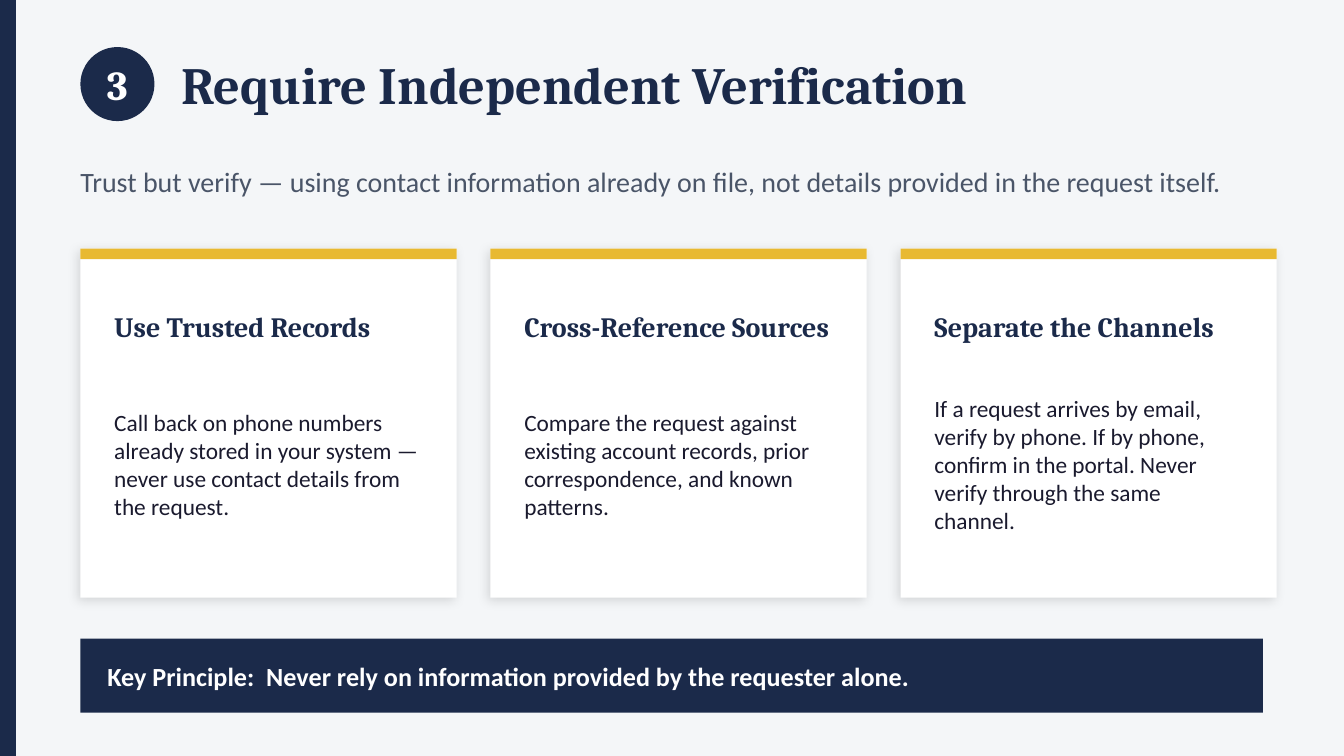
from dataclasses import dataclass

from lxml.etree import SubElement
from pptx import Presentation
from pptx.dml.color import RGBColor
from pptx.enum.shapes import MSO_SHAPE
from pptx.enum.text import MSO_ANCHOR, PP_ALIGN
from pptx.oxml.ns import qn
from pptx.shapes.autoshape import Shape
from pptx.slide import Slide
from pptx.util import Cm, Pt

COLORS = {
    "background": "F4F6F8",
    "navy": "1B2A4A",
    "gold": "E8B931",
    "white": "FFFFFF",
    "slate": "4A5568",
    "ink": "1A1A2E",
    "shadow": "000000",
}
SLIDE_WIDTH, SLIDE_HEIGHT = 25.4, 14.29
MARGIN = 1.52
CONTENT_WIDTH = 22.35
CARD_TOP, CARD_WIDTH, CARD_HEIGHT = 4.7, 7.11, 6.6
CARD_PITCH = 7.75
CARD_PADDING = 0.64


@dataclass(frozen=True)
class Area:
    left: float
    top: float
    width: float
    height: float

    def lengths(self) -> tuple[Cm, Cm, Cm, Cm]:
        return Cm(self.left), Cm(self.top), Cm(self.width), Cm(self.height)


@dataclass(frozen=True)
class TextStyle:
    font: str
    size: float
    color: str
    bold: bool = False
    align: PP_ALIGN = PP_ALIGN.LEFT


@dataclass(frozen=True)
class Card:
    heading: str
    body: str


NUMBER = TextStyle("Cambria", 22, "white", True, PP_ALIGN.CENTER)
TITLE = TextStyle("Cambria", 28, "navy", True)
SUBTITLE = TextStyle("Calibri", 15, "slate")
HEADING = TextStyle("Cambria", 15, "navy", True)
BODY = TextStyle("Calibri", 12.5, "ink")
PRINCIPLE = TextStyle("Calibri", 14, "white", True)

CARDS = [
    Card(
        "Use Trusted Records",
        "Call back on phone numbers already stored in your system — "
        "never use contact details from the request.",
    ),
    Card(
        "Cross-Reference Sources",
        "Compare the request against existing account records, "
        "prior correspondence, and known patterns.",
    ),
    Card(
        "Separate the Channels",
        "If a request arrives by email, verify by phone. If by phone, "
        "confirm in the portal. Never verify through the same channel.",
    ),
]


def rgb(name: str) -> RGBColor:
    return RGBColor.from_string(COLORS[name])


def add_block(
    page: Slide, area: Area, color: str, kind: MSO_SHAPE = MSO_SHAPE.RECTANGLE
) -> Shape:
    block = page.shapes.add_shape(kind, *area.lengths())
    block.shadow.inherit = False
    block.fill.solid()
    block.fill.fore_color.rgb = rgb(color)
    block.line.fill.background()
    return block


def add_text(page: Slide, area: Area, text: str, style: TextStyle) -> None:
    box = page.shapes.add_textbox(*area.lengths())
    frame = box.text_frame
    frame.word_wrap = True
    frame.vertical_anchor = MSO_ANCHOR.MIDDLE
    frame.margin_left = frame.margin_right = Cm(0)
    frame.margin_top = frame.margin_bottom = Cm(0)
    para = frame.paragraphs[0]
    para.text = text
    para.alignment = style.align
    para.font.name = style.font
    para.font.size = Pt(style.size)
    para.font.bold = style.bold
    para.font.color.rgb = rgb(style.color)


def add_soft_shadow(block: Shape) -> None:
    effects = block.element.spPr.find(qn("a:effectLst"))
    shadow = SubElement(
        effects,
        qn("a:outerShdw"),
        blurRad=str(Pt(6)),
        dist=str(Pt(2)),
        dir=str(135 * 60000),
        algn="bl",
        rotWithShape="0",
    )
    color = SubElement(shadow, qn("a:srgbClr"), val=COLORS["shadow"])
    SubElement(color, qn("a:alpha"), val="12000")


def add_card(page: Slide, left: float, card: Card) -> None:
    panel = add_block(page, Area(left, CARD_TOP, CARD_WIDTH, CARD_HEIGHT), "white")
    add_soft_shadow(panel)
    add_block(page, Area(left, CARD_TOP, CARD_WIDTH, 0.2), "gold")
    text_left = left + CARD_PADDING
    text_width = CARD_WIDTH - 2 * CARD_PADDING
    add_text(page, Area(text_left, 5.46, text_width, 1.4), card.heading, HEADING)
    add_text(page, Area(text_left, 6.99, text_width, 3.56), card.body, BODY)


def main() -> None:
    deck = Presentation()
    deck.slide_width, deck.slide_height = Cm(SLIDE_WIDTH), Cm(SLIDE_HEIGHT)
    page = deck.slides.add_slide(deck.slide_layouts[6])
    page.background.fill.solid()
    page.background.fill.fore_color.rgb = rgb("background")

    add_block(page, Area(0, 0, 0.3, SLIDE_HEIGHT), "navy")
    badge = Area(MARGIN, 0.89, 1.4, 1.4)
    add_block(page, badge, "navy", MSO_SHAPE.OVAL)
    add_text(page, badge, "3", NUMBER)
    add_text(
        page, Area(3.43, 0.76, 20.32, 1.65), "Require Independent Verification", TITLE
    )
    add_text(
        page,
        Area(MARGIN, 2.92, CONTENT_WIDTH, 1.02),
        "Trust but verify — using contact information already on file, "
        "not details provided in the request itself.",
        SUBTITLE,
    )

    for index, card in enumerate(CARDS):
        add_card(page, MARGIN + index * CARD_PITCH, card)

    add_block(page, Area(MARGIN, 12.07, CONTENT_WIDTH, 1.4), "navy")
    add_text(
        page,
        Area(2.03, 12.07, 21.34, 1.4),
        "Key Principle:  Never rely on information provided by the requester alone.",
        PRINCIPLE,
    )
    deck.save("out.pptx")


if __name__ == "__main__":
    main()
